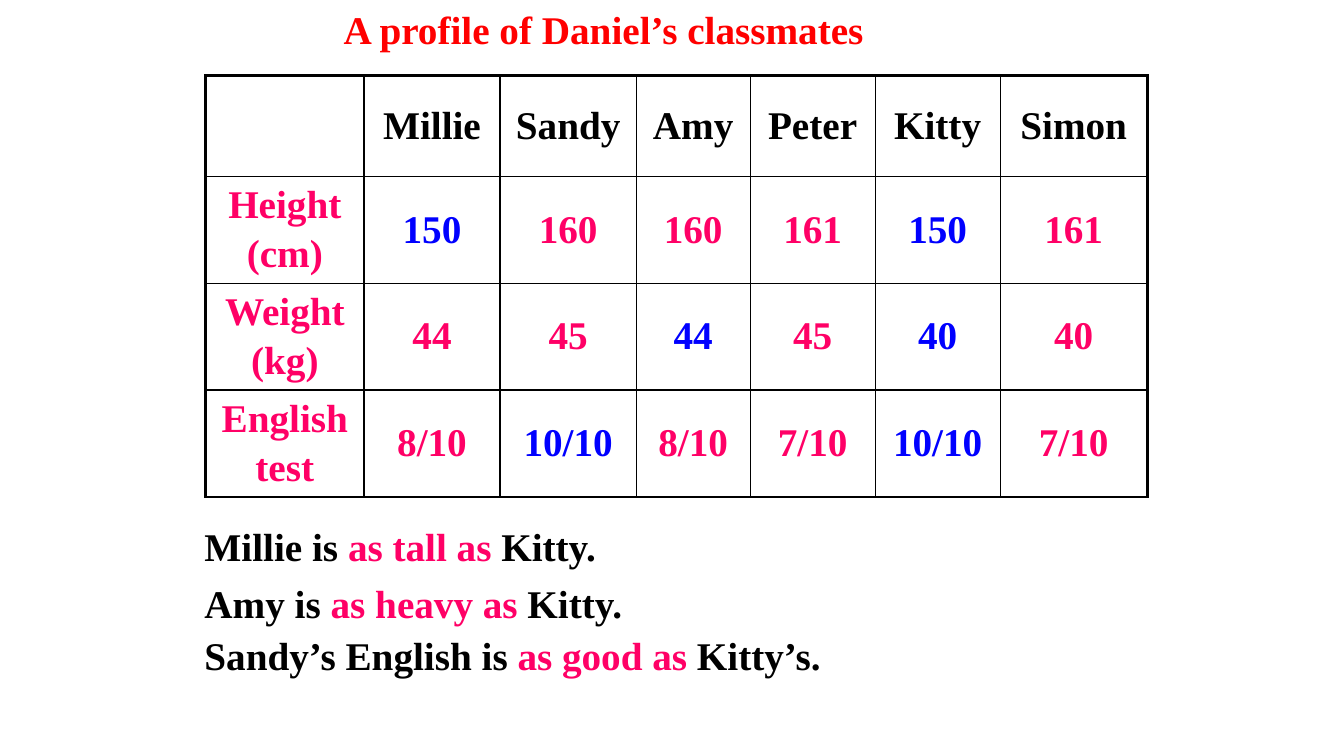
"""Build the slide that compares Daniel's classmates in a table and three sentences."""
from lxml import etree
from pptx import Presentation, util as u
from pptx.dml.color import RGBColor
from pptx.enum import text as t
from pptx.oxml import ns

BLACK, RED, PINK, BLUE = "000000", "FF0000", "FF0066", "0000FF"
FONT_FORMAT = {"name": "Times New Roman", "size": u.Pt(28), "bold": True}


def add_run(paragraph, words, colour):
    run = paragraph.add_run()
    run.text = words
    for name, value in FONT_FORMAT.items():
        setattr(run.font, name, value)
    run.font.color.rgb = RGBColor.from_string(colour)


def add_border(cell, index, side, points):
    line = etree.Element(ns.qn(f"a:ln{side}"), w=str(u.Pt(points)))
    fill = etree.SubElement(line, ns.qn("a:solidFill"))
    etree.SubElement(fill, ns.qn("a:srgbClr"), val=BLACK)
    cell._tc.get_or_add_tcPr().insert(index, line)


presentation = Presentation()
presentation.slide_width = u.Inches(13.33)
presentation.slide_height = u.Inches(7.5)
slide = presentation.slides.add_slide(presentation.slide_layouts[6])

rows = [
    ["", "Millie", "Sandy", "Amy", "Peter", "Kitty", "Simon"],
    ["Height\n(cm)", "150", "160", "160", "161", "150", "161"],
    ["Weight\n(kg)", "44", "45", "44", "45", "40", "40"],
    ["English\ntest", "8/10", "10/10", "8/10", "7/10", "10/10", "7/10"],
]
blue_cells = {(1, 1), (1, 5), (2, 3), (2, 5), (3, 2), (3, 5)}
column_widths = [1.57, 1.35, 1.35, 1.13, 1.24, 1.24, 1.46]
row_heights = [1, 1.06, 1.06, 1.06]
last_row, last_column = len(rows) - 1, len(column_widths) - 1

table = slide.shapes.add_table(
    len(rows), len(column_widths), u.Inches(2.04), u.Inches(0.75),
    u.Inches(sum(column_widths)), u.Inches(sum(row_heights))).table
for name in ("first_row", "horz_banding"):
    setattr(table, name, False)
for column, width in zip(table.columns, column_widths):
    column.width = u.Inches(width)
for row, height in zip(table.rows, row_heights):
    row.height = u.Inches(height)

for r, row in enumerate(rows):
    for c, words in enumerate(row):
        cell = table.cell(r, c)
        cell.vertical_anchor = t.MSO_ANCHOR.MIDDLE
        cell.fill.background()
        outer_sides = {"L": c == 0, "R": c == last_column, "T": r == 0, "B": r == last_row}
        for index, (side, is_outer) in enumerate(outer_sides.items()):
            add_border(cell, index, side, 2.25 if is_outer else 1)
        colour = BLACK if r == 0 else BLUE if (r, c) in blue_cells else PINK
        for i, line in enumerate(words.split("\n")):
            paragraph = cell.text_frame.add_paragraph() if i else cell.text_frame.paragraphs[0]
            paragraph.alignment = t.PP_ALIGN.CENTER
            paragraph.space_before = u.Pt(4.2 if i else 0)
            if line:
                add_run(paragraph, line, colour)

text_boxes = [
    (3.31, 0, 6.42, 0.57, [("A profile of Daniel’s classmates", RED)]),
    (1.93, 5.13, 7.24, 0.57, [("Millie is ", BLACK), ("as tall as", PINK), (" Kitty.", BLACK)]),
    (1.93, 5.7, 6.56, 0.57, [("Amy is ", BLACK), ("as heavy as", PINK), (" Kitty.", BLACK)]),
    (1.93, 6.21, 8.14, 1.28,
     [("Sandy’s English is ", BLACK), ("as good as", PINK), (" Kitty’s.", BLACK)]),
]
for left, top, width, height, runs in text_boxes:
    box = slide.shapes.add_textbox(*map(u.Inches, (left, top, width, height)))
    box.text_frame.word_wrap = True
    for words, colour in runs:
        add_run(box.text_frame.paragraphs[0], words, colour)

presentation.save("out.pptx")
